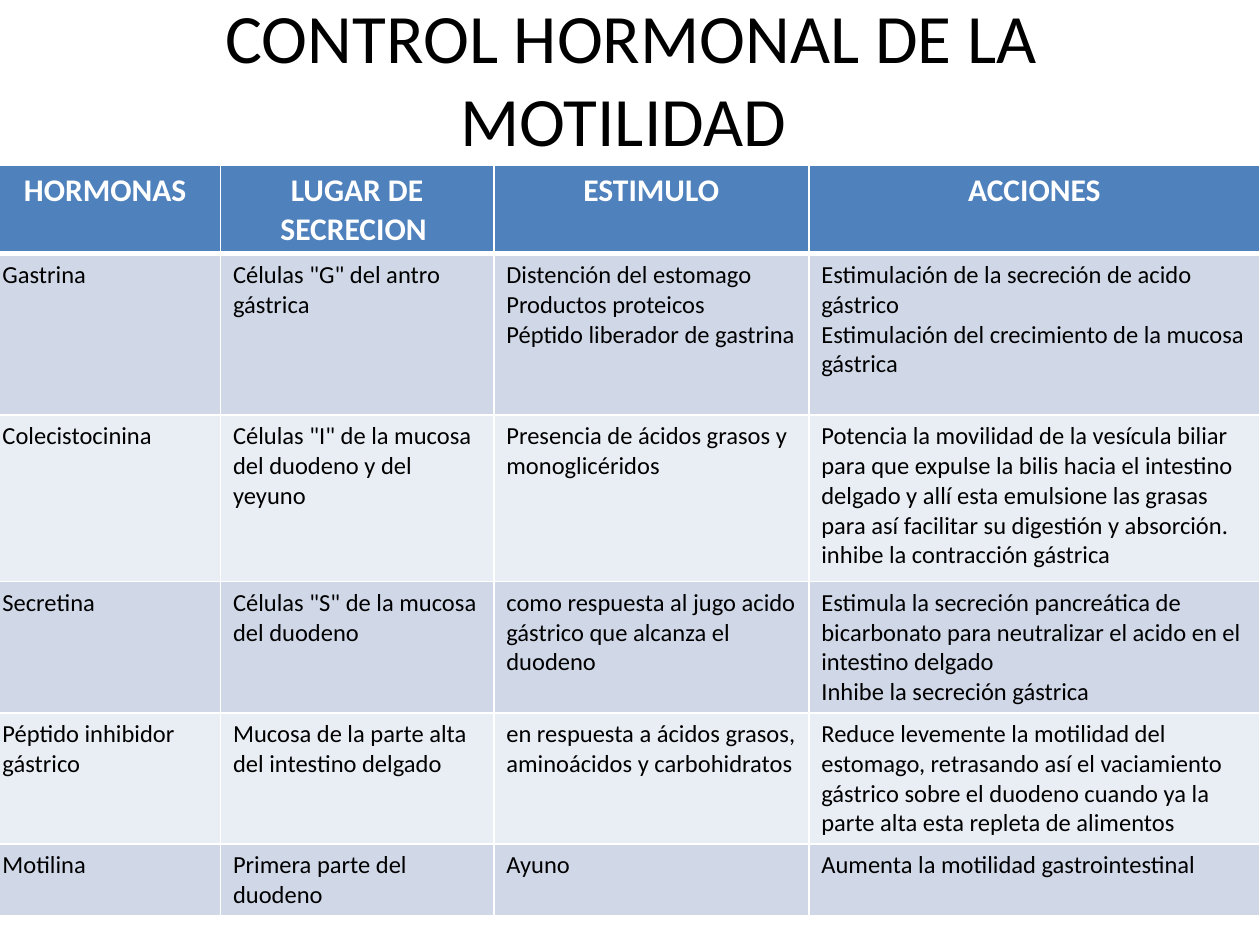
import pptx
import pptx.util
import pptx.dml.color
import pptx.enum.text
import pptx.oxml
from pptx.oxml.ns import nsdecls

Pt = pptx.util.Pt
ALIGN = pptx.enum.text.PP_ALIGN

TITLE = "CONTROL HORMONAL DE LA MOTILIDAD "
HEADINGS = ["HORMONAS", "LUGAR DE SECRECION ", "ESTIMULO", "ACCIONES"]
HORMONES = [
    ["Gastrina",
     'Células "G" del antro gástrica',
     "Distención del estomago\nProductos proteicos\nPéptido liberador de gastrina",
     "Estimulación de la secreción de acido gástrico\n"
     "Estimulación del crecimiento de la mucosa gástrica"],
    ["Colecistocinina",
     'Células "I" de la mucosa del duodeno y del yeyuno',
     "Presencia de ácidos grasos y monoglicéridos",
     "Potencia la movilidad de la vesícula biliar para que expulse la bilis hacia el intestino "
     "delgado y allí esta emulsione las grasas para así facilitar su digestión y absorción.\n"
     "inhibe la contracción gástrica"],
    ["Secretina",
     'Células "S" de la mucosa del duodeno',
     "como respuesta al jugo acido gástrico que alcanza el duodeno",
     "Estimula la secreción pancreática de bicarbonato para neutralizar el acido en el "
     "intestino delgado\nInhibe la secreción gástrica"],
    ["Péptido inhibidor gástrico",
     "Mucosa de la parte alta del intestino delgado",
     "en respuesta a ácidos grasos, aminoácidos y carbohidratos",
     "Reduce levemente la motilidad del estomago, retrasando así el vaciamiento gástrico "
     "sobre el duodeno cuando ya la parte alta esta repleta de alimentos"],
    ["Motilina", "Primera parte del duodeno", "Ayuno",
     "Aumenta la motilidad gastrointestinal"],
]
COLUMN_WIDTHS = [131.8, 156.2, 180, 257.8]
ROW_HEIGHTS = [50.3, 92.2, 95.2, 75, 75, 41]
HEADER_FILL = "4F81BD"
BAND_FILLS = ["D0D8E8", "E9EDF4"]


def color(value):
    return pptx.dml.color.RGBColor.from_string(value)


def format_text(frame, size, ink, bold=False, align=ALIGN.LEFT):
    for paragraph in frame.paragraphs:
        paragraph.alignment = align
        for run in paragraph.runs:
            run.font.name = "Calibri"
            run.font.size = Pt(size)
            run.font.bold = bold
            run.font.color.rgb = color(ink)


def add_borders(cell, bottom, top):
    properties = cell._tc.get_or_add_tcPr()
    widths = {"lnL": 1, "lnR": 1, "lnT": top, "lnB": bottom}
    for position, (side, width) in enumerate(widths.items()):
        properties.insert(position, pptx.oxml.parse_xml(
            f'<a:{side} {nsdecls("a")} w="{Pt(width)}"><a:solidFill>'
            f'<a:srgbClr val="FFFFFF"/></a:solidFill></a:{side}>'))


def add_title(slide):
    title = slide.shapes.add_textbox(Pt(36.7), Pt(-0.7), Pt(648), Pt(90))
    frame = title.text_frame
    frame.word_wrap = True
    frame.vertical_anchor = pptx.enum.text.MSO_ANCHOR.MIDDLE
    frame.text = TITLE
    format_text(frame, 39.6, "000000", align=ALIGN.CENTER)


def add_hormone_table(slide):
    rows = [HEADINGS] + HORMONES
    table = slide.shapes.add_table(
        len(rows), len(HEADINGS), Pt(-5.8), Pt(94.6),
        Pt(sum(COLUMN_WIDTHS)), Pt(sum(ROW_HEIGHTS))).table
    for column, width in zip(table.columns, COLUMN_WIDTHS):
        column.width = Pt(width)
    for r, (texts, height) in enumerate(zip(rows, ROW_HEIGHTS)):
        table.rows[r].height = Pt(height)
        for c, text in enumerate(texts):
            cell = table.cell(r, c)
            cell.text_frame.text = text
            cell.fill.solid()
            if r == 0:
                cell.fill.fore_color.rgb = color(HEADER_FILL)
                format_text(cell.text_frame, 18, "FFFFFF", True, ALIGN.CENTER)
            else:
                cell.fill.fore_color.rgb = color(BAND_FILLS[(r - 1) % 2])
                format_text(cell.text_frame, 14, "000000")
            add_borders(cell, bottom=3 if r == 0 else 1, top=3 if r == 1 else 1)


def main():
    deck = pptx.Presentation()
    deck.slide_width, deck.slide_height = Pt(720), Pt(540)
    slide = deck.slides.add_slide(deck.slide_layouts[6])
    add_title(slide)
    add_hormone_table(slide)
    deck.save("out.pptx")


if __name__ == "__main__":
    main()
